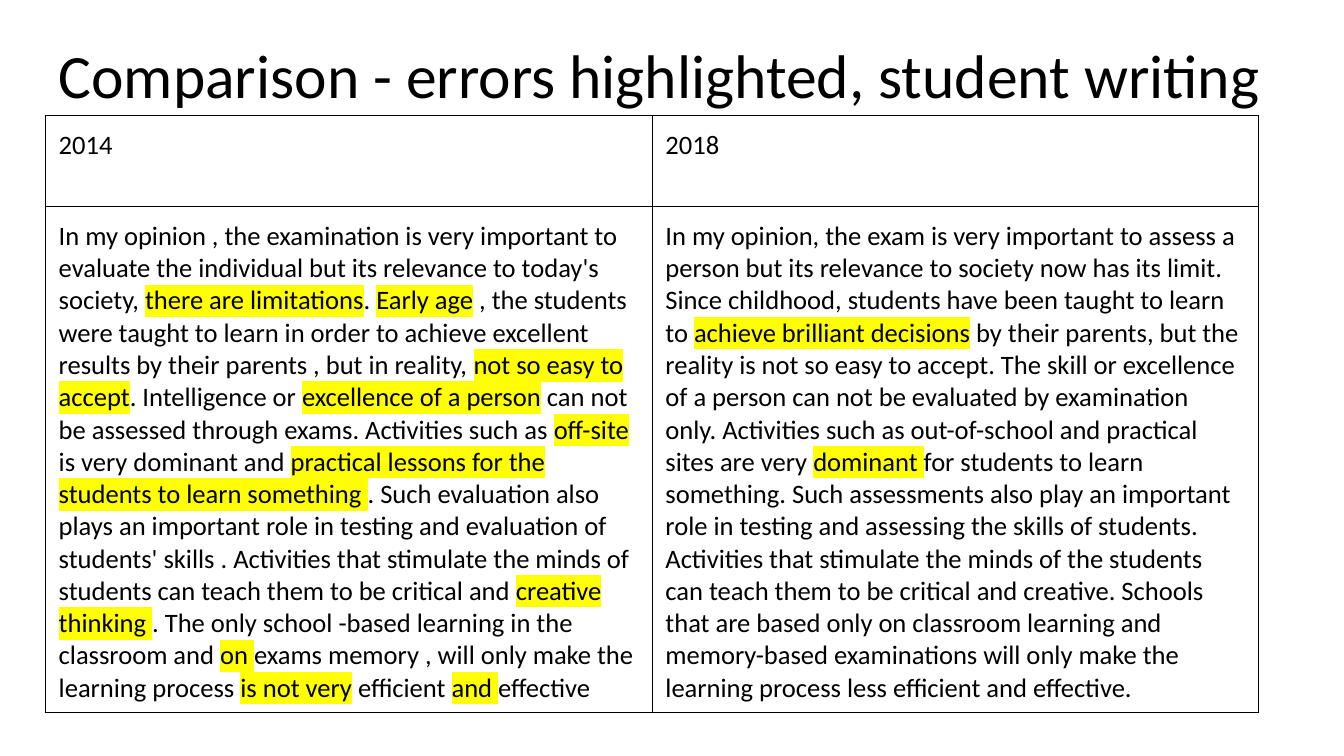
from lxml.etree import SubElement, Element
from pptx import Presentation
from pptx.dml.color import RGBColor
from pptx.enum.text import MSO_ANCHOR as Anchor
from pptx.oxml.ns import qn
from pptx.util import Cm, Pt

BLACK = RGBColor(0x00, 0x00, 0x00)
YELLOW = RGBColor(0xFF, 0xFF, 0x00)

FONT = "Calibri"
LEFT = Cm(1.14)
INSET = Cm(0.34)
BORDER = Pt(0.75)
COLUMN_WIDTH = Cm(15.29)
ROW_HEIGHTS = (Cm(2.29), Cm(12.52))
MARGINS = {f"margin_{side}": INSET for side in ("left", "top", "right", "bottom")}

TITLE = ("Comparison - errors highlighted, student writing",)

# Plain and highlighted pieces take turns, starting with a plain one.
ESSAY_2014 = (
    "In my opinion , the examination is very important to evaluate the individual "
    "but its relevance to today's society, ",
    "there are limitations",
    ". ",
    "Early age",
    " , the students were taught to learn in order to achieve excellent results by "
    "their parents , but in reality, ",
    "not so easy to accept",
    ". Intelligence or ",
    "excellence of a person",
    " can not be assessed through exams. Activities such as ",
    "off-site",
    " is very dominant and ",
    "practical lessons for the students to learn something ",
    ". Such evaluation also plays an important role in testing and evaluation of "
    "students' skills . Activities that stimulate the minds of students can teach "
    "them to be critical and ",
    "creative thinking ",
    ". The only school -based learning in the classroom and ",
    "on ",
    "exams memory , will only make the learning process ",
    "is not very",
    " efficient ",
    "and ",
    "effective",
)
ESSAY_2018 = (
    "In my opinion, the exam is very important to assess a person but its relevance "
    "to society now has its limit. Since childhood, students have been taught to "
    "learn to ",
    "achieve brilliant decisions",
    " by their parents, but the reality is not so easy to accept. The skill or "
    "excellence of a person can not be evaluated by examination only. Activities "
    "such as out-of-school and practical sites are very ",
    "dominant ",
    "for students to learn something. Such assessments also play an important role "
    "in testing and assessing the skills of students. Activities that stimulate the "
    "minds of the students can teach them to be critical and creative. Schools that "
    "are based only on classroom learning and memory-based examinations will only "
    "make the learning process less efficient and effective.",
)
ROWS = ((("2014",), ("2018",)), (ESSAY_2014, ESSAY_2018))


def apply_format(target, values):
    for name, value in values.items():
        setattr(target, name, value)


def add_solid_fill(parent, color):
    fill = SubElement(parent, qn("a:solidFill"))
    SubElement(fill, qn("a:srgbClr"), val=str(color))


def highlight(span):
    mark = Element(qn("a:highlight"))
    SubElement(mark, qn("a:srgbClr"), val=str(YELLOW))
    span.font._element.find(qn("a:latin")).addprevious(mark)


def write_text(para, pieces, size):
    """Write each piece as a span and highlight every second one."""
    for index, piece in enumerate(pieces):
        span = para.add_run()
        span.text = piece
        apply_format(span.font, {"size": Pt(size), "name": FONT})
        span.font.color.rgb = BLACK
        if index % 2:
            highlight(span)


def draw_borders(cell):
    properties = cell._tc.get_or_add_tcPr()
    for position, side in enumerate("LRTB"):
        line = Element(qn(f"a:ln{side}"), w=str(BORDER))
        add_solid_fill(line, BLACK)
        properties.insert(position, line)


def add_title(page):
    box = page.shapes.add_textbox(LEFT, Cm(0.58), Cm(31.55), Cm(2.13))
    frame = box.text_frame
    apply_format(frame, {"word_wrap": True, "vertical_anchor": Anchor.TOP, **MARGINS})
    write_text(frame.paragraphs[0], TITLE, 44)


def add_comparison(page):
    table = page.shapes.add_table(
        len(ROWS), len(ROWS[0]), LEFT, Cm(2.92), COLUMN_WIDTH * 2, sum(ROW_HEIGHTS)
    ).table
    apply_format(table, {"first_row": False, "horz_banding": False})
    for column in table.columns:
        column.width = COLUMN_WIDTH
    for row, height, texts in zip(table.rows, ROW_HEIGHTS, ROWS):
        row.height = height
        for cell, pieces in zip(row.cells, texts):
            apply_format(cell, {"vertical_anchor": Anchor.TOP, **MARGINS})
            cell.fill.background()
            draw_borders(cell)
            write_text(cell.text_frame.paragraphs[0], pieces, 19)


def main():
    deck = Presentation()
    apply_format(deck, {"slide_width": Cm(33.87), "slide_height": Cm(19.05)})
    page = deck.slides.add_slide(deck.slide_layouts[6])
    add_title(page)
    add_comparison(page)
    deck.save("out.pptx")


if __name__ == "__main__":
    main()
